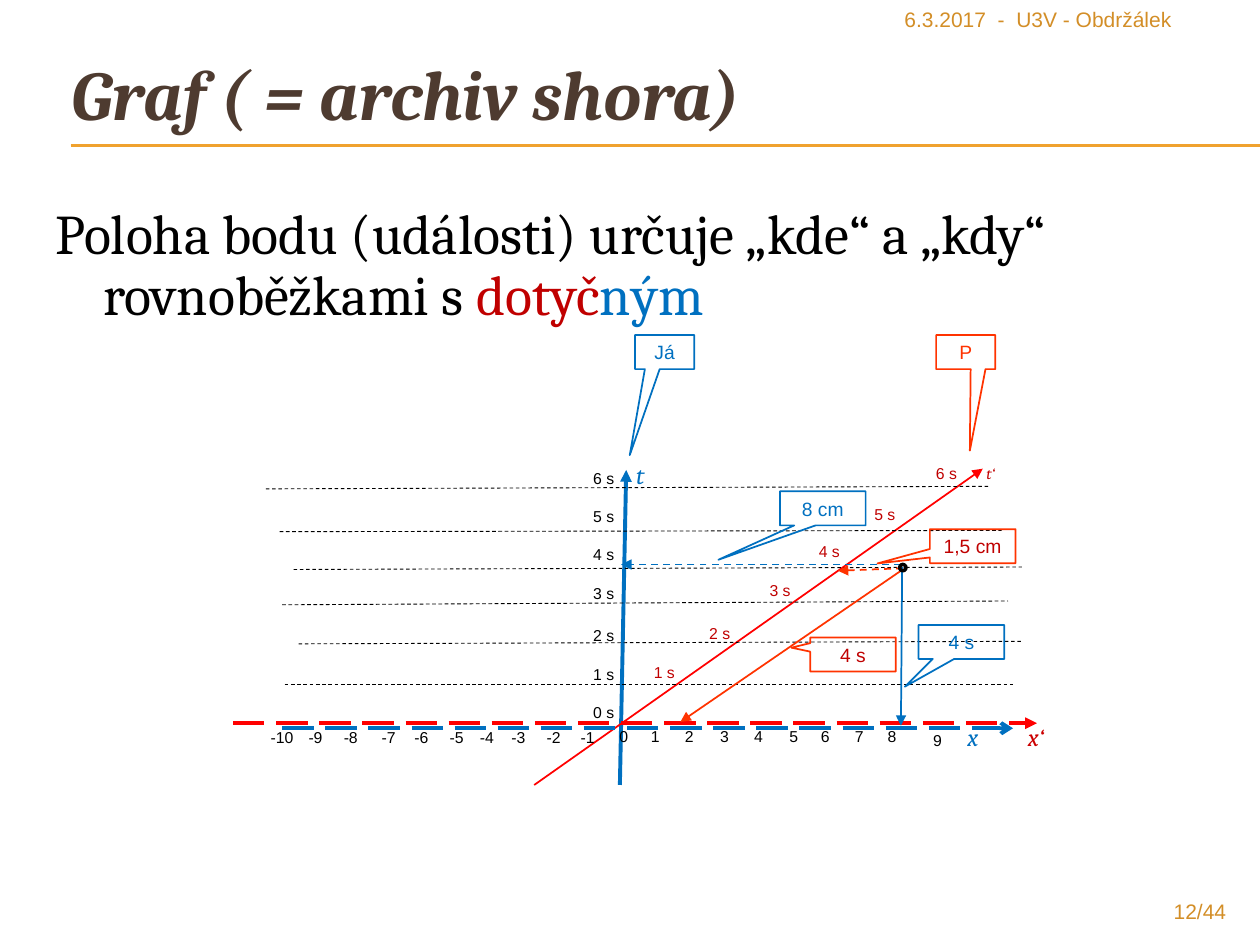
from lxml.etree import SubElement
from pptx import Presentation
from pptx.dml.color import RGBColor
from pptx.enum.dml import MSO_LINE_DASH_STYLE as DASH
from pptx.enum.shapes import MSO_CONNECTOR as CONN, MSO_SHAPE as SHAPE
from pptx.enum.text import MSO_ANCHOR as ANCHOR, PP_ALIGN as ALIGN
from pptx.oxml.ns import qn
from pptx.util import Inches, Pt

COLS, ROWS = 10, 7.5
W, H = Inches(COLS), Inches(ROWS)
BLUE, RED, ORANGE, DARK_RED = "0070C0", "FF0000", "FF3300", "C00000"
BLACK, GOLD, BROWN = "000000", "D38E27", "4E3B30"


def rgb(value):
    return RGBColor.from_string(value)


def col(n):
    return round(W * n / COLS)


def row(n):
    return round(H * n / ROWS)


def box(x, y, w, h):
    return col(x), row(y), col(w), row(h)


def style_run(r, size, color, font="Arial", bold=False, italic=False):
    r.font.size, r.font.name = Pt(size), font
    r.font.bold, r.font.italic = bold, italic
    r.font.color.rgb = rgb(color)


def add_text(slide, at, text, size, color, align=ALIGN.LEFT, wrap=True, **look):
    tf = slide.shapes.add_textbox(*box(*at)).text_frame
    tf.word_wrap = wrap
    p = tf.paragraphs[0]
    p.text, p.alignment = text, align
    style_run(p.runs[0], size, color, **look)
    return tf


def hang(p):
    p.line_spacing = 0.9
    pPr = p._p.get_or_add_pPr()
    pPr.set("marL", str(col(0.38)))
    pPr.set("indent", str(-col(0.38)))


def add_line(slide, start, end, color, width, dash=None, head=None, tail=None):
    (x1, y1), (x2, y2) = start, end
    sp = slide.shapes.add_connector(
        CONN.STRAIGHT, col(x1), row(y1), col(x2), row(y2))
    sp.line.color.rgb, sp.line.width = rgb(color), Pt(width)
    if dash:
        sp.line.dash_style = dash
    ln = sp.line._get_or_add_ln()
    for tag, kind in (("a:headEnd", head), ("a:tailEnd", tail)):
        if kind:
            SubElement(ln, qn(tag), type=kind)
    SubElement(sp._element.spPr, qn("a:effectLst"))


def add_outline(slide, kind, at, color, width):
    sp = slide.shapes.add_shape(kind, *box(*at))
    sp.shadow.inherit = False
    sp.fill.background()
    sp.line.color.rgb, sp.line.width = rgb(color), Pt(width)
    return sp


def add_callout(slide, x, y, w, tip, text, line, color):
    sp = add_outline(slide, SHAPE.RECTANGULAR_CALLOUT, (x, y, w, 0.27), line, 1)
    sp.adjustments[0], sp.adjustments[1] = tip
    tf = sp.text_frame
    tf.margin_left = tf.margin_right = 0
    tf.vertical_anchor = ANCHOR.MIDDLE
    p = tf.paragraphs[0]
    p.text, p.alignment = text, ALIGN.CENTER
    style_run(p.runs[0], 11, color)


def add_heading(slide):
    for y in (1.15, 1.16):
        add_line(slide, (0.56, y), (COLS, y), "F0A22E", 0.75)
    tf = add_text(slide, (0.47, 0.43, 5.63, 0.71), "Graf ( = archiv shora)", 40,
                  BROWN, wrap=False, font="Cambria", bold=True, italic=True)
    hang(tf.paragraphs[0])
    add_text(slide, (7.08, 0, 2.88, 0.32), "6.3.2017  -  U3V - Obdržálek", 12, GOLD)
    add_text(slide, (9, 7.08, 0.83, 0.27), "12/44", 12, GOLD, ALIGN.RIGHT)


def add_body(slide):
    tf = add_text(slide, (0.34, 1.59, 9.49, 5.49),
                  "Poloha bodu (události) určuje „kde“ a „kdy“ rovnoběžkami s ",
                  32, BLACK, font="Cambria")
    p = tf.paragraphs[0]
    hang(p)
    for text, color in (("dotyč", DARK_RED), ("ným", BLUE)):
        r = p.add_run()
        r.text = text
        style_run(r, 32, color, font="Cambria")


def add_axes(slide):
    add_line(slide, (4.92, 6.23), (4.97, 3.73), BLUE, 2.25, tail="triangle")
    add_line(slide, (4.24, 6.23), (7.8, 3.72), RED, 1, tail="triangle")
    add_line(slide, (2.24, 5.78), (8.04, 5.78), BLUE, 2.25,
             DASH.LONG_DASH, tail="arrow")
    add_line(slide, (1.85, 5.74), (8.23, 5.74), RED, 2.25,
             DASH.LONG_DASH, tail="triangle")
    for x, y, text, size, color in (
            (4.95, 3.6, "t", 14, BLUE), (7.58, 5.68, "x", 14, BLUE),
            (8.06, 5.68, "x‘", 14, "CC0000"), (7.73, 3.63, "t‘", 9, DARK_RED)):
        add_text(slide, (x, y, 0.42, 0.34), text, size, color,
                 font="Cambria", italic=True)


def add_simultaneity_lines(slide):
    for x1, y1, x2, y2 in (
            (2.11, 3.88, 7.86, 3.86), (2.22, 4.22, 7.95, 4.21),
            (2.33, 4.52, 8.11, 4.5), (2.24, 4.8, 8, 4.77),
            (2.37, 5.11, 8.11, 5.09), (2.26, 5.43, 8.06, 5.43)):
        add_line(slide, (x1, y1), (x2, y2), BLACK, 0.5, DASH.DASH)


def add_event(slide):
    add_line(slide, (6.65, 4.53), (7.17, 4.51), ORANGE, 1, DASH.DASH, head="triangle")
    add_line(slide, (7.15, 4.53), (5.4, 5.73), ORANGE, 1, tail="triangle")
    add_line(slide, (7.15, 4.48), (4.93, 4.48), BLUE, 1, DASH.DASH, tail="triangle")
    add_line(slide, (7.16, 4.5), (7.15, 5.76), BLUE, 1, tail="triangle")
    add_outline(slide, SHAPE.OVAL, (7.14, 4.48, 0.05, 0.05), BLACK, 2)


def add_scales(slide):
    for n, y in enumerate((5.53, 5.23, 4.92, 4.58, 4.27, 3.97, 3.67)):
        add_text(slide, (4.61, y, 0.42, 0.25), f"{n} s", 9, BLACK)
    moving = ((5.09, 5.21), (5.53, 4.9), (6.01, 4.56),
              (6.4, 4.25), (6.84, 3.96), (7.33, 3.63))
    for n, (x, y) in enumerate(moving, 1):
        add_text(slide, (x, y, 0.42, 0.25), f"{n} s", 9, DARK_RED)
    lefts = (2.05, 2.35, 2.63, 2.93, 3.19, 3.47, 3.71, 3.96, 4.24, 4.51)
    for n, x in enumerate(lefts, -10):
        add_text(slide, (x, 5.73, 0.41, 0.25), str(n), 9, BLACK)
    rights = (4.88, 5.13, 5.4, 5.68, 5.95, 6.23, 6.48, 6.75, 7.01, 7.37)
    for n, x in enumerate(rights):
        y = 5.75 if n == 9 else 5.72
        tf = add_text(slide, (x, y, 0.14, 0.25), str(n), 9, BLACK, ALIGN.CENTER)
        tf.margin_left = tf.margin_right = 0


def add_callouts(slide):
    for callout in (
            (5.04, 2.66, 0.47, (-0.589, 3.028), "Já", BLUE, BLUE),
            (7.43, 2.66, 0.47, (0.07, 2.894), "P", ORANGE, ORANGE),
            (6.19, 3.9, 0.68, (-1.219, 1.511), "8 cm", BLUE, BLUE),
            (7.29, 4.96, 0.68, (-0.66, 1.316), "4 s", BLUE, BLUE),
            (7.38, 4.2, 0.68, (-1.111, 0.508), "1,5 cm", ORANGE, DARK_RED),
            (6.43, 5.06, 0.68, (-0.719, -0.201), "4 s", ORANGE, DARK_RED)):
        add_callout(slide, *callout)


def main():
    prs = Presentation()
    prs.slide_width, prs.slide_height = W, H
    slide = prs.slides.add_slide(prs.slide_layouts[6])
    for build in (add_heading, add_body, add_axes, add_simultaneity_lines,
                  add_event, add_scales, add_callouts):
        build(slide)
    prs.save("out.pptx")


if __name__ == "__main__":
    main()
